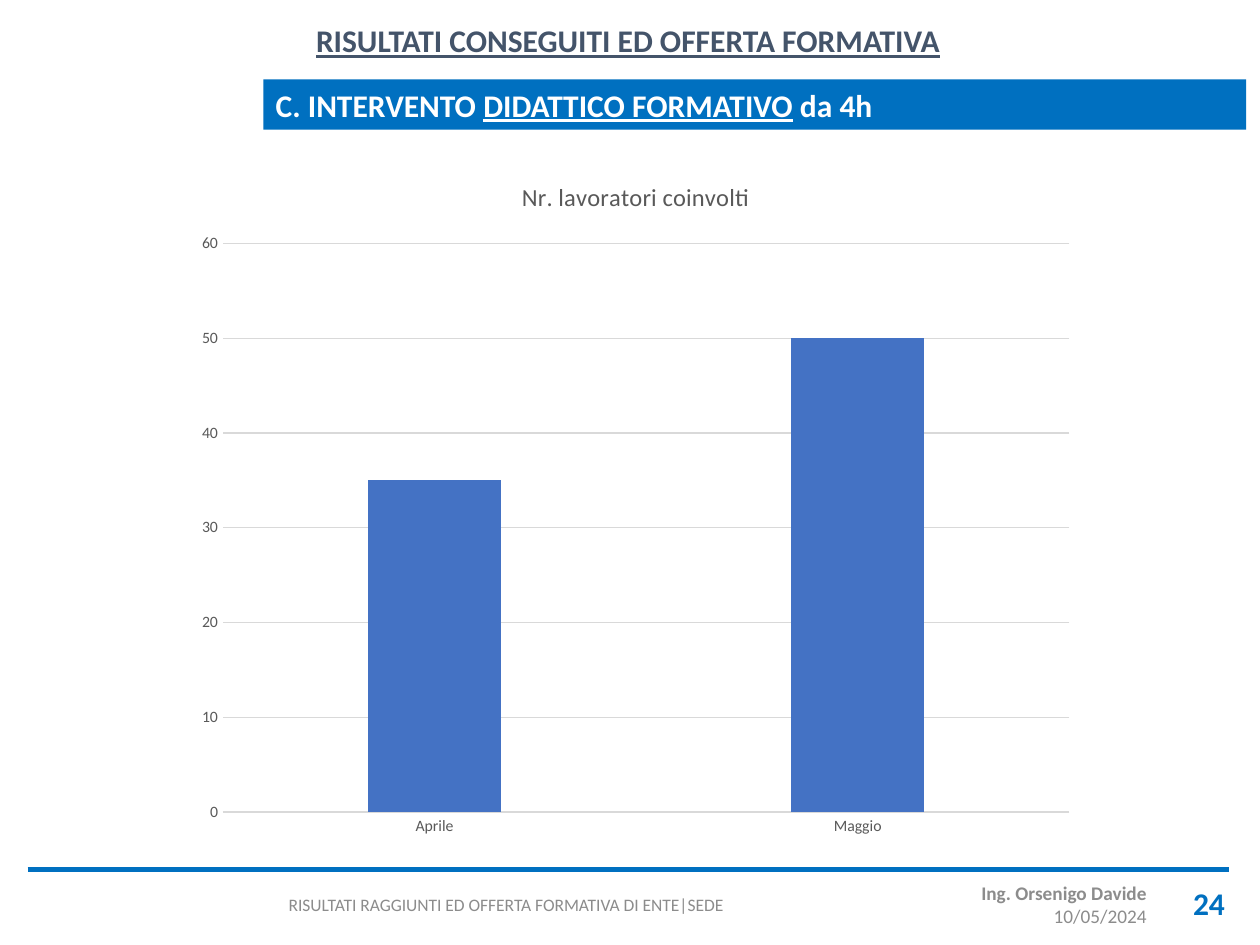
from lxml.etree import SubElement
from pptx import Presentation
from pptx.chart.data import CategoryChartData
from pptx.dml.color import RGBColor
from pptx.enum.chart import XL_CHART_TYPE, XL_TICK_MARK
from pptx.enum.shapes import MSO_CONNECTOR, MSO_SHAPE
from pptx.enum.text import MSO_ANCHOR, PP_ALIGN
from pptx.oxml.ns import qn
from pptx.util import Pt

BLUE = RGBColor(0x00, 0x70, 0xC0)
SLATE = RGBColor(0x44, 0x54, 0x6A)
FOOTER_GRAY = RGBColor(0x8C, 0x8C, 0x8C)
CHART_GRAY = RGBColor(0x59, 0x59, 0x59)
GRID_GRAY = RGBColor(0xD9, 0xD9, 0xD9)
BAR_BLUE = RGBColor(0x44, 0x72, 0xC4)
WHITE = RGBColor(0xFF, 0xFF, 0xFF)


def set_font(font, size, color, bold=False):
    font.name = "Calibri"
    font.size = Pt(size)
    font.color.rgb = color
    font.bold = bold


def add_text(left, top, width, lines, size, color, align, anchor):
    frame = slide.shapes.add_textbox(Pt(left), Pt(top), Pt(width), Pt(28.8)).text_frame
    frame.word_wrap = True
    frame.vertical_anchor = anchor
    frame.text = "\n".join(text for text, bold in lines)
    for paragraph, (text, bold) in zip(frame.paragraphs, lines):
        paragraph.alignment = align
        set_font(paragraph.font, size, color, bold)
    return frame


prs = Presentation()
prs.slide_width, prs.slide_height = Pt(720), Pt(540)
slide = prs.slides.add_slide(prs.slide_layouts[6])

footer_rule = slide.shapes.add_connector(
    MSO_CONNECTOR.STRAIGHT, Pt(15.84), Pt(496.8), Pt(702), Pt(496.8))
footer_rule.line.color.rgb = BLUE
footer_rule.line.width = Pt(3)
SubElement(footer_rule.line._get_or_add_ln().getparent(), qn("a:effectLst"))

add_text(507.6, 502.56, 154.8, [("Ing. Orsenigo Davide", True), ("10/05/2024", False)],
         11, FOOTER_GRAY, PP_ALIGN.RIGHT, MSO_ANCHOR.MIDDLE)
add_text(661.68, 501.84, 58.32, [("24", True)], 18, BLUE, PP_ALIGN.CENTER, MSO_ANCHOR.TOP)
title = add_text(15.84, 8.64, 686.16, [("RISULTATI CONSEGUITI ED OFFERTA FORMATIVA", True)],
                 18, SLATE, PP_ALIGN.CENTER, MSO_ANCHOR.TOP)
title.paragraphs[0].font.underline = True
add_text(127.44, 502.56, 323.28,
         [("RISULTATI RAGGIUNTI ED OFFERTA FORMATIVA DI ENTE|SEDE", False)],
         10, FOOTER_GRAY, PP_ALIGN.CENTER, MSO_ANCHOR.MIDDLE)

banner = slide.shapes.add_shape(MSO_SHAPE.RECTANGLE, Pt(150.48), Pt(45.36), Pt(561.6), Pt(28.8))
banner.shadow.inherit = False
banner.fill.solid()
banner.fill.fore_color.rgb = BLUE
banner.line.fill.background()
banner.text_frame.word_wrap = True
banner.text_frame.vertical_anchor = MSO_ANCHOR.TOP
heading = banner.text_frame.paragraphs[0]
heading.alignment = PP_ALIGN.LEFT
set_font(heading.font, 18, WHITE, True)
for text, underline in [("C. INTERVENTO ", False), ("DIDATTICO FORMATIVO", True), (" da 4h", False)]:
    run = heading.add_run()
    run.text = text
    run.font.underline = underline

workers = CategoryChartData()
workers.categories = ["Aprile", "Maggio"]
workers.add_series("Nr. lavoratori coinvolti", (35, 50))
chart = slide.shapes.add_chart(
    XL_CHART_TYPE.COLUMN_CLUSTERED, Pt(105.12), Pt(88.56), Pt(516.24), Pt(396.72), workers).chart
chart.font.name = "Calibri"
chart.font.size = Pt(10)
chart.has_legend = False
chart.has_title = True
chart.chart_title.include_in_layout = False
chart.chart_title.text_frame.text = "Nr. lavoratori coinvolti"
set_font(chart.chart_title.text_frame.paragraphs[0].font, 14, CHART_GRAY)

plot = chart.plots[0]
plot.gap_width = 219
plot.overlap = -27
plot.vary_by_categories = False
bars = plot.series[0].format.fill
bars.solid()
bars.fore_color.rgb = BAR_BLUE

months, counts = chart.category_axis, chart.value_axis
for axis in (months, counts):
    axis.major_tick_mark = XL_TICK_MARK.NONE
    axis.minor_tick_mark = XL_TICK_MARK.NONE
    set_font(axis.tick_labels.font, 9, CHART_GRAY)
counts.minimum_scale = 0
counts.maximum_scale = 60
counts.major_unit = 10
counts.has_major_gridlines = True
counts.format.line.fill.background()
for line in (months.format.line, counts.major_gridlines.format.line):
    line.color.rgb = GRID_GRAY
    line.width = Pt(0.75)

prs.save("out.pptx")
